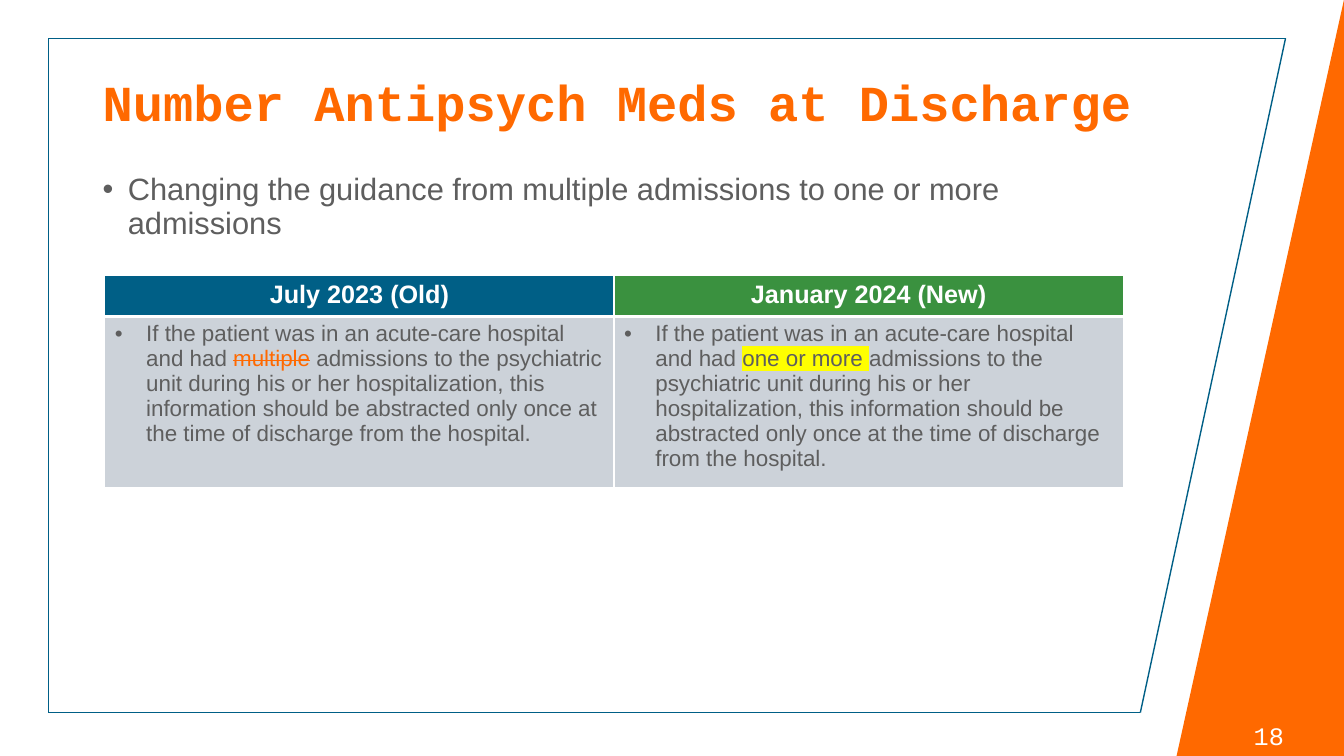
from dataclasses import dataclass

from lxml.etree import SubElement
from pptx import Presentation
from pptx.dml.color import RGBColor
from pptx.enum.shapes import MSO_CONNECTOR as Connector, MSO_SHAPE as Shape
from pptx.enum.text import MSO_ANCHOR as Anchor, PP_ALIGN as Align
from pptx.oxml.ns import qn
from pptx.util import Inches, Pt


@dataclass(frozen=True)
class Theme:
    orange: str = "FF6900"
    blue: str = "005F86"
    green: str = "3A913F"
    gray: str = "5E5E5E"
    pale: str = "CCD2D9"
    white: str = "FFFFFF"
    yellow: str = "FFFF00"
    sans: str = "Arial"
    mono: str = "Courier New"
    title: int = 36
    body: int = 22
    label: int = 18
    cell: int = 16


T = Theme()
TITLE = "Number Antipsych Meds at Discharge"
BODY = "Changing the guidance from multiple admissions to one or more admissions"
PAGE = "18"
START = "If the patient was in an acute-care hospital and had "
END = ("admissions to the psychiatric unit during his or her hospitalization, this information "
       "should be abstracted only once at the time of discharge from the hospital.")
COLUMNS = [
    ("July 2023 (Old)", T.blue,
     [START, ("multiple", {"color": T.orange, "strike": True}), " " + END]),
    ("January 2024 (New)", T.green,
     [START, ("one or more ", {"highlight": T.yellow}), END]),
]
TOP_LEFT, TOP_RIGHT = (0.48, 0.38), (12.75, 0.38)
BOTTOM_LEFT, BOTTOM_RIGHT = (0.48, 7.07), (11.31, 7.07)
FRAME = [(BOTTOM_LEFT, BOTTOM_RIGHT), (TOP_LEFT, TOP_RIGHT),
         (TOP_LEFT, BOTTOM_LEFT), (TOP_RIGHT, BOTTOM_RIGHT)]
COLUMN_WIDTH = 5.05
ROW_HEIGHTS = [0.41, 1.57]


def rgb(color):
    return RGBColor.from_string(color)


def write(tf, runs, size, color, font=T.sans, bold=False, align=Align.LEFT,
          spacing=None, indent=None, anchor=Anchor.TOP):
    tf.word_wrap = True
    tf.vertical_anchor = anchor
    p = tf.paragraphs[0]
    p.alignment = align
    if spacing:
        p.line_spacing = spacing
    if indent:
        pPr = p._p.get_or_add_pPr()
        pPr.set("marL", str(Inches(indent)))
        pPr.set("indent", str(-Inches(indent)))
        SubElement(pPr, qn("a:buFont")).set("typeface", T.sans)
        SubElement(pPr, qn("a:buChar")).set("char", "•")
    for item in [runs] if isinstance(runs, str) else runs:
        text, style = (item, {}) if isinstance(item, str) else item
        r = p.add_run()
        r.text = text
        r.font.size, r.font.name, r.font.bold = Pt(size), font, bold
        r.font.color.rgb = rgb(style.get("color", color))
        rPr = r.font._element
        if style.get("strike"):
            rPr.set("strike", "sngStrike")
        if "highlight" in style:
            mark = SubElement(rPr, qn("a:highlight"))
            SubElement(mark, qn("a:srgbClr")).set("val", style["highlight"])
            rPr.find(qn("a:solidFill")).addnext(mark)


def add_text(s, box, runs, **fmt):
    write(s.shapes.add_textbox(*map(Inches, box)).text_frame, runs, **fmt)


def add_frame_line(s, start, end):
    line = s.shapes.add_connector(Connector.STRAIGHT, *map(Inches, start + end))
    line.line.color.rgb = rgb(T.blue)
    line.line.width = Pt(1)
    SubElement(line.element.spPr, qn("a:effectLst"))


def style_cell(cell, fill, borders):
    tcPr = cell._tc.get_or_add_tcPr()
    for side, width in borders.items():
        ln = SubElement(tcPr, qn("a:ln" + side), w=str(Pt(width)))
        SubElement(SubElement(ln, qn("a:solidFill")), qn("a:srgbClr")).set("val", T.white)
    cell.fill.solid()
    cell.fill.fore_color.rgb = rgb(fill)


def add_comparison(s):
    table = s.shapes.add_table(
        len(ROW_HEIGHTS), len(COLUMNS), Inches(1.04), Inches(2.73),
        Inches(COLUMN_WIDTH * len(COLUMNS)), Inches(sum(ROW_HEIGHTS))).table
    for row, height in zip(table.rows, ROW_HEIGHTS):
        row.height = Inches(height)
    for i, (heading, fill, guidance) in enumerate(COLUMNS):
        table.columns[i].width = Inches(COLUMN_WIDTH)
        head, detail = table.cell(0, i), table.cell(1, i)
        style_cell(head, fill, {"L": 1, "R": 1, "T": 1, "B": 3})
        style_cell(detail, T.pale, {"L": 1, "R": 1, "T": 3, "B": 1})
        write(head.text_frame, heading, size=T.label, color=T.white, bold=True,
              align=Align.CENTER)
        write(detail.text_frame, guidance, size=T.cell, color=T.gray, indent=0.31)


def main():
    prs = Presentation()
    prs.slide_width, prs.slide_height = Inches(13.33), Inches(7.5)
    s = prs.slides.add_slide(prs.slide_layouts[6])

    wedge = s.shapes.add_shape(Shape.RIGHT_TRIANGLE, *map(Inches, (11.67, 0, 1.66, 7.5)))
    wedge.element.spPr.xfrm.set("flipH", "1")
    wedge.shadow.inherit = False
    wedge.fill.solid()
    wedge.fill.fore_color.rgb = rgb(T.orange)
    wedge.line.fill.background()
    for start, end in FRAME:
        add_frame_line(s, start, end)

    add_text(s, (12.22, 7.1, 0.73, 0.4), PAGE, size=T.label, color=T.white,
             font=T.mono, align=Align.CENTER)
    add_text(s, (0.92, 0.4, 11.5, 1.28), TITLE, size=T.title, color=T.orange,
             font=T.mono, bold=True, spacing=0.9, anchor=Anchor.MIDDLE)
    add_text(s, (0.92, 1.68, 10.34, 4.93), BODY, size=T.body, color=T.gray,
             spacing=0.9, indent=0.25)
    add_comparison(s)
    prs.save("out.pptx")


if __name__ == "__main__":
    main()
